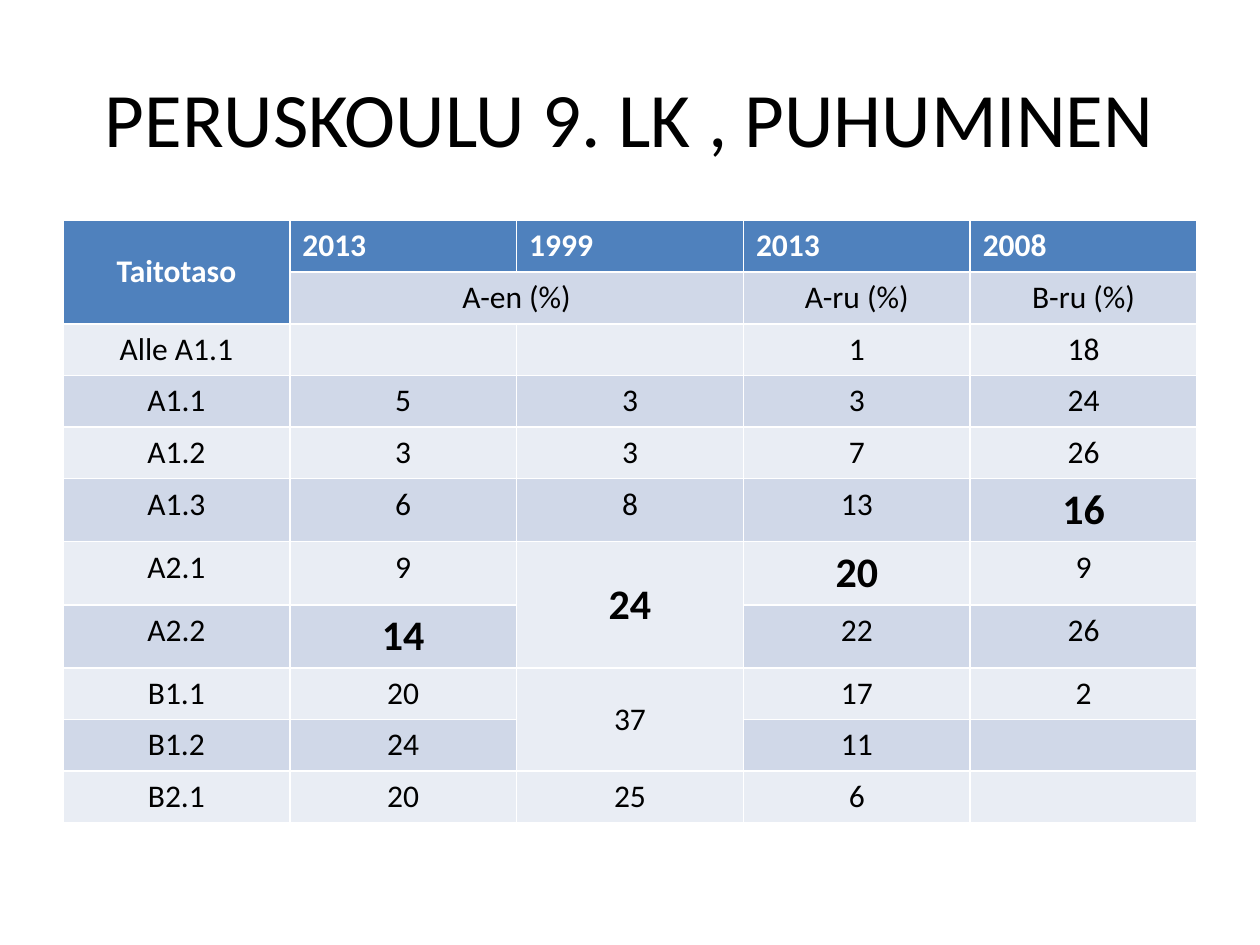
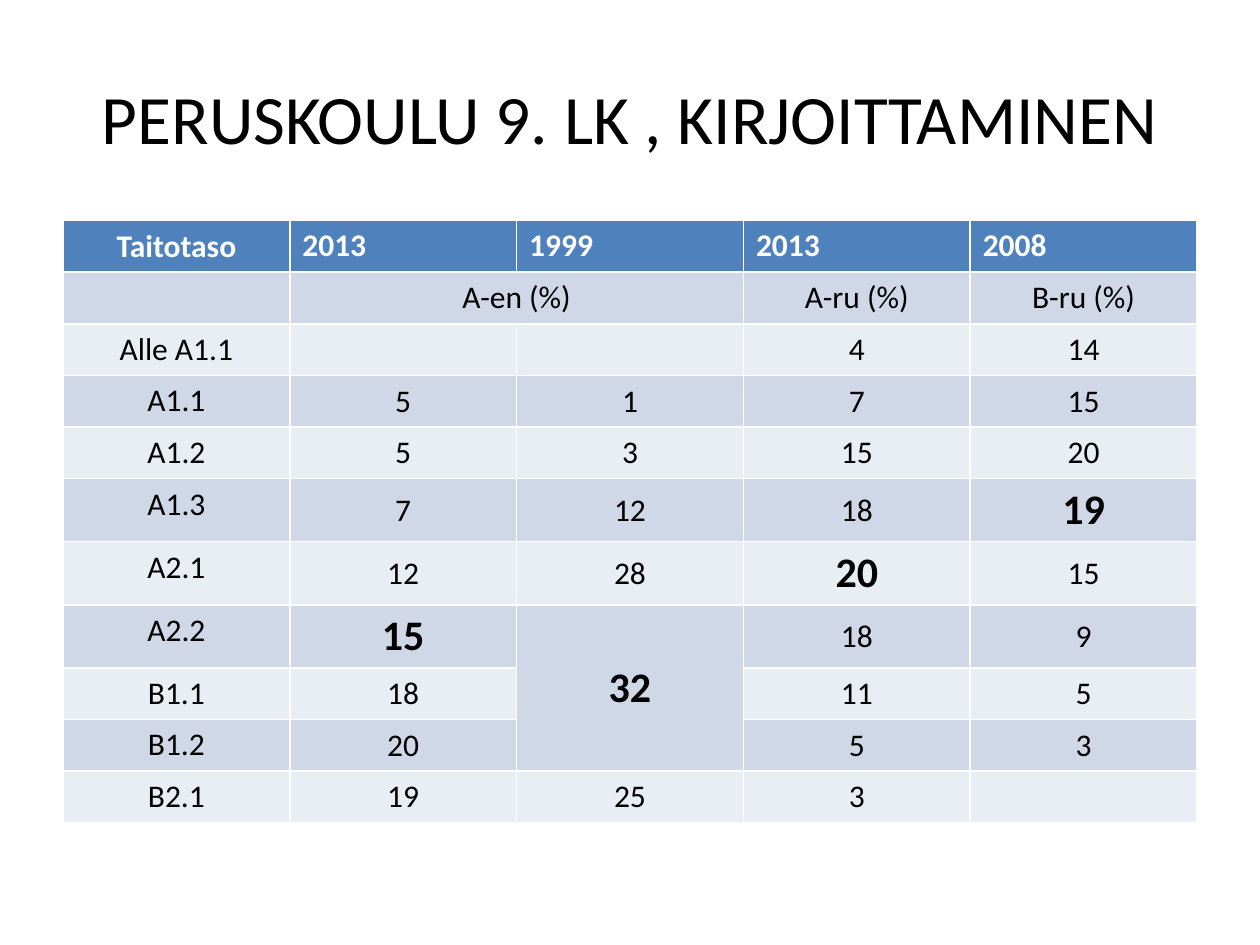
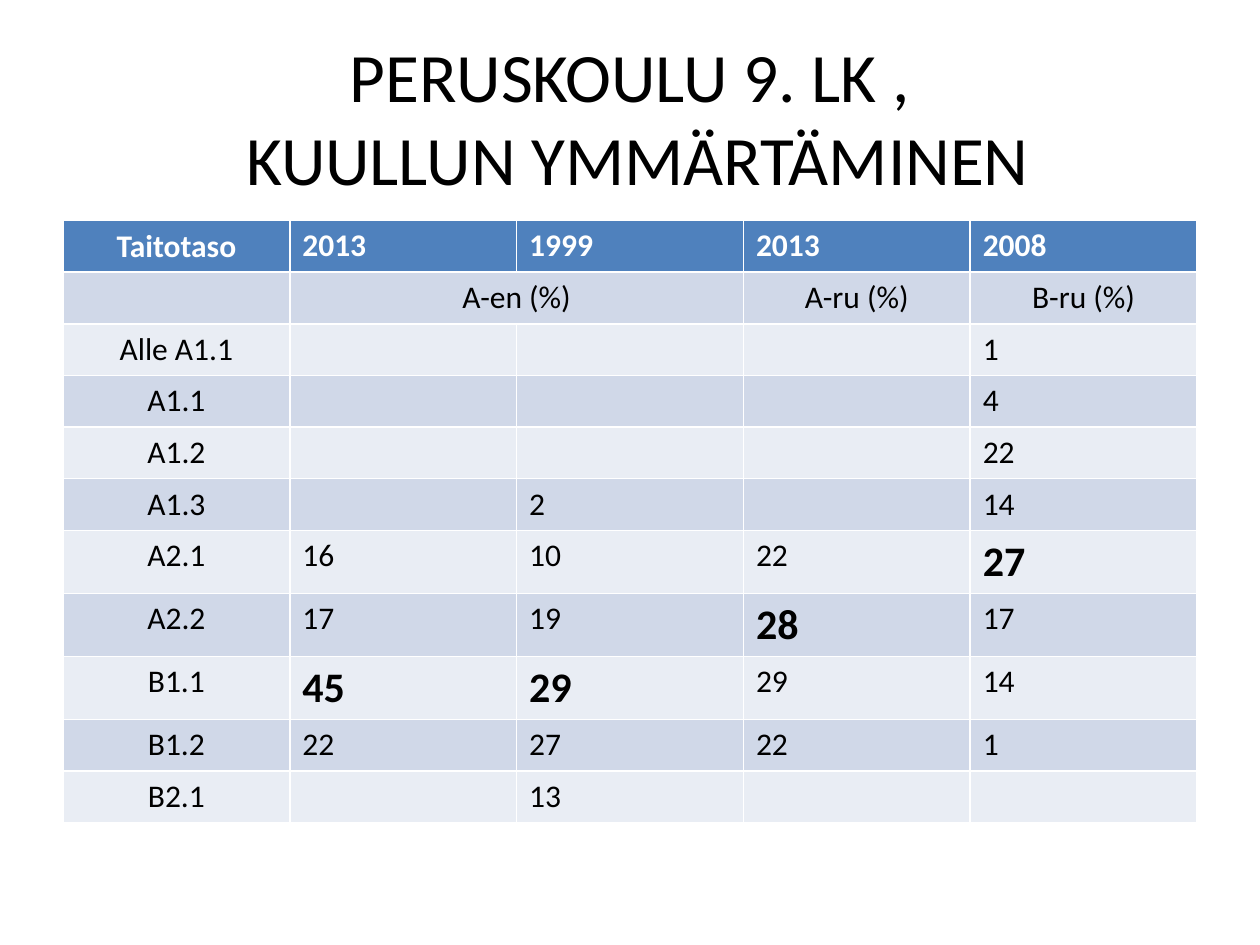
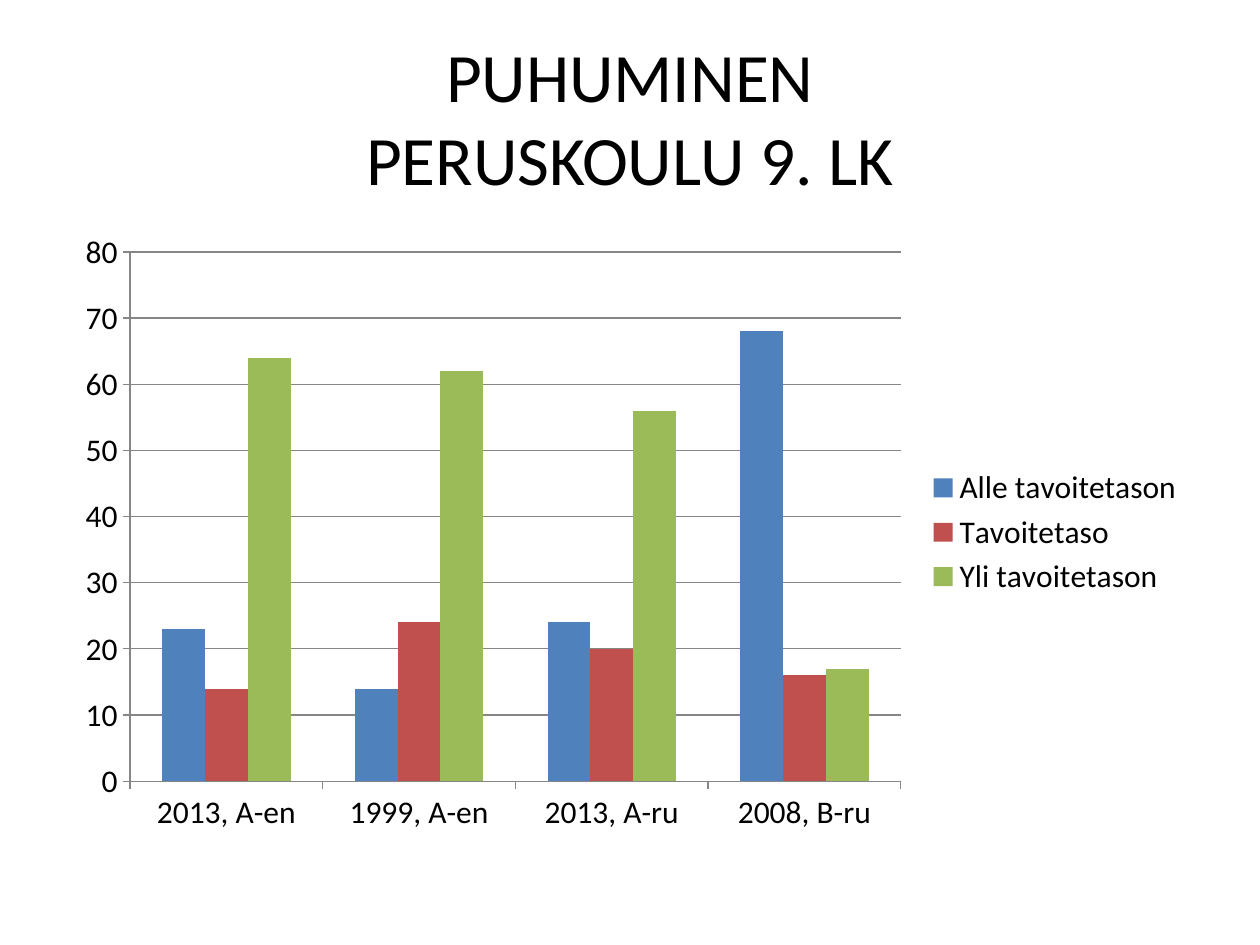
from pptx import Presentation
from pptx.chart.data import CategoryChartData
from pptx.dml.color import RGBColor
from pptx.enum.chart import XL_CHART_TYPE as ChartType, XL_LEGEND_POSITION as LegendPosition
from pptx.enum.chart import XL_TICK_MARK as TickMark
from pptx.enum.text import MSO_ANCHOR as Anchor, PP_ALIGN as Align
from pptx.util import Inches, Pt

BLACK = RGBColor(0x00, 0x00, 0x00)
WHITE = RGBColor(0xFF, 0xFF, 0xFF)
BLUE = RGBColor(0x4F, 0x81, 0xBD)
RED = RGBColor(0xC0, 0x50, 0x4D)
GREEN = RGBColor(0x9B, 0xBB, 0x59)
DARK_BAND = RGBColor(0xD0, 0xD8, 0xE8)
LIGHT_BAND = RGBColor(0xE9, 0xED, 0xF4)
GRAY = RGBColor(0x86, 0x86, 0x86)

FONT = "Calibri"
BODY_SIZE = 18
TARGET_SIZE = 24
ROW_HEIGHT = 0.41

# Boxes: left, top, width, height in inches
TITLE_BOX = (0.5, 0.3, 9, 1.25)
TABLE_BOX = (0.5, 1.75, 9, 11 * ROW_HEIGHT)
CHART_BOX = (0.5, 1.75, 9, 4.95)

YEARS = ["Taitotaso", "2013", "1999", "2013", "2008"]
LANGUAGES = ["", "A-en (%)", "", "A-ru (%)", "B-ru (%)"]
LEVELS = ["Alle A1.1", "A1.1", "A1.2", "A1.3", "A2.1", "A2.2", "B1.1", "B1.2", "B2.1"]

# Values per level; targets are (row, column), merges are (row, column, last row)
SPEAKING = dict(
    values=[["", "", "1", "18"], ["5", "3", "3", "24"], ["3", "3", "7", "26"],
            ["6", "8", "13", "16"], ["9", "24", "20", "9"], ["14", "", "22", "26"],
            ["20", "37", "17", "2"], ["24", "", "11", ""], ["20", "25", "6", ""]],
    targets={(5, 4), (6, 2), (6, 3), (7, 1)},
    merges=[(0, 0, 1), (6, 2, 7), (8, 2, 9)],
)
WRITING = dict(
    values=[["", "", "4", "14"], ["5", "1", "7", "15"], ["5", "3", "15", "20"],
            ["7", "12", "18", "19"], ["12", "28", "20", "15"], ["15", "32", "18", "9"],
            ["18", "", "11", "5"], ["20", "", "5", "3"], ["19", "25", "3", ""]],
    targets={(5, 4), (6, 3), (7, 1), (7, 2)},
    merges=[(7, 2, 9)],
    anchor=Anchor.MIDDLE,
)
LISTENING = dict(
    values=[["", "", "", "1"], ["", "", "", "4"], ["", "", "", "22"],
            ["", "2", "", "14"], ["16", "10", "22", "27"], ["17", "19", "28", "17"],
            ["45", "29", "29", "14"], ["22", "27", "22", "1"], ["", "13", "", ""]],
    targets={(6, 4), (7, 3), (8, 1), (8, 2)},
    align=Align.LEFT,
)

CATEGORIES = ["2013, A-en", "1999, A-en", "2013, A-ru", "2008, B-ru"]
SERIES = [
    ("Alle tavoitetason", (23, 14, 24, 68), BLUE),
    ("Tavoitetaso", (14, 24, 20, 16), RED),
    ("Yli tavoitetason", (64, 62, 56, 17), GREEN),
]


def inches(box):
    return [Inches(length) for length in box]


def style_font(font, size, color=BLACK, bold=False):
    font.name = FONT
    font.size = Pt(size)
    font.bold = bold
    font.color.rgb = color


def add_titled_slide(presentation, title, size=39.6):
    slide = presentation.slides.add_slide(presentation.slide_layouts[6])
    frame = slide.shapes.add_textbox(*inches(TITLE_BOX)).text_frame
    frame.word_wrap = True
    frame.vertical_anchor = Anchor.MIDDLE
    paragraph = frame.paragraphs[0]
    paragraph.text = title
    paragraph.alignment = Align.CENTER
    style_font(paragraph.font, size)
    return slide


def add_level_table(slide, box, values, targets, merges=(),
                    align=Align.CENTER, anchor=Anchor.TOP):
    rows = [YEARS, LANGUAGES] + [[level, *shares] for level, shares in zip(LEVELS, values)]
    table = slide.shapes.add_table(len(rows), len(YEARS), *inches(box)).table
    for row in table.rows:
        row.height = Inches(ROW_HEIGHT)

    # Merged cells
    table.cell(1, 1).merge(table.cell(1, 2))
    for top, column, bottom in merges:
        table.cell(top, column).merge(table.cell(bottom, column))

    for row, texts in enumerate(rows):
        for column, text in enumerate(texts):
            cell = table.cell(row, column)
            is_header = row == 0
            is_target = (row, column) in targets

            # Banded fill
            cell.fill.solid()
            cell.fill.fore_color.rgb = BLUE if is_header else DARK_BAND if row % 2 else LIGHT_BAND

            # Text
            paragraph = cell.text_frame.paragraphs[0]
            paragraph.text = text
            style_font(paragraph.font, TARGET_SIZE if is_target else BODY_SIZE,
                       WHITE if is_header else BLACK, is_header or is_target)

            # Placement of the text
            if column == 0 or row == 1:
                paragraph.alignment = Align.CENTER
            else:
                paragraph.alignment = Align.LEFT if is_header else align
            if cell.is_merge_origin or row == 1 or (row, column) == (0, 0):
                cell.vertical_anchor = Anchor.MIDDLE
            elif column == 0 or is_header:
                cell.vertical_anchor = Anchor.TOP
            else:
                cell.vertical_anchor = anchor


def add_target_chart(slide, box):
    data = CategoryChartData()
    data.categories = CATEGORIES
    for name, values, _ in SERIES:
        data.add_series(name, values)
    chart = slide.shapes.add_chart(ChartType.COLUMN_CLUSTERED, *inches(box), data).chart
    style_font(chart.font, BODY_SIZE)
    chart.has_title = False

    # Columns
    plot = chart.plots[0]
    plot.gap_width = 150
    plot.vary_by_categories = False
    for series, (_, _, color) in zip(plot.series, SERIES):
        series.format.fill.solid()
        series.format.fill.fore_color.rgb = color

    # Axes and grid
    for axis in (chart.category_axis, chart.value_axis):
        axis.major_tick_mark = TickMark.OUTSIDE
        axis.format.line.color.rgb = GRAY
    chart.value_axis.has_major_gridlines = True
    chart.value_axis.major_gridlines.format.line.color.rgb = GRAY

    # Legend
    chart.has_legend = True
    chart.legend.position = LegendPosition.RIGHT
    chart.legend.include_in_layout = False


def main():
    presentation = Presentation()
    presentation.slide_width = Inches(10)
    presentation.slide_height = Inches(7.5)

    slide = add_titled_slide(presentation, "PERUSKOULU 9. LK , PUHUMINEN", 44)
    add_level_table(slide, TABLE_BOX, **SPEAKING)
    slide = add_titled_slide(presentation, "PERUSKOULU 9. LK , KIRJOITTAMINEN")
    add_level_table(slide, TABLE_BOX, **WRITING)
    slide = add_titled_slide(presentation, "PERUSKOULU 9. LK ,\v KUULLUN YMMÄRTÄMINEN")
    add_level_table(slide, TABLE_BOX, **LISTENING)
    slide = add_titled_slide(presentation, "PUHUMINEN\vPERUSKOULU 9. LK")
    add_target_chart(slide, CHART_BOX)

    presentation.save("out.pptx")


if __name__ == "__main__":
    main()
